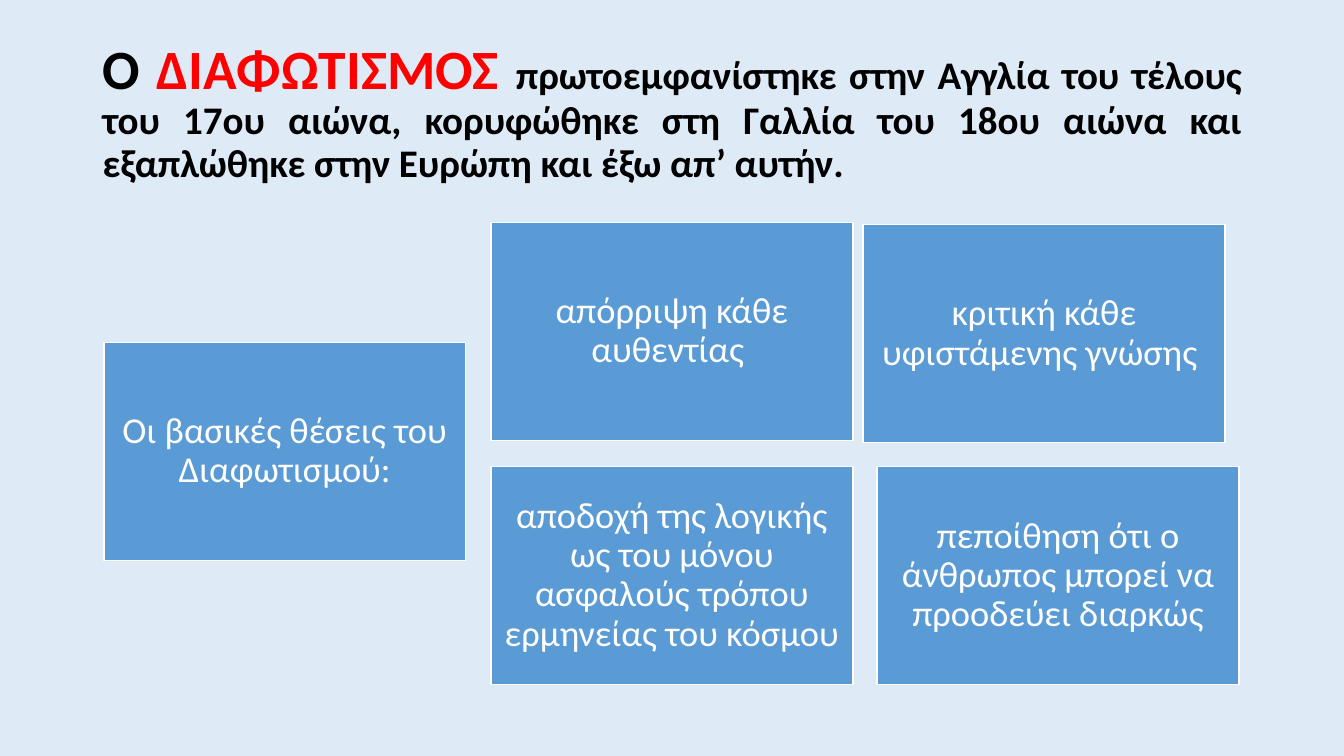
from pptx import Presentation
from pptx.dml.color import RGBColor
from pptx.enum.shapes import MSO_SHAPE as Shape
from pptx.enum.text import MSO_ANCHOR as Anchor, PP_ALIGN as Align
from pptx.util import Inches, Pt

FONT = "Calibri"
BLACK, RED, WHITE = "000000", "FF0000", "FFFFFF"
PALE_BLUE, BLUE = "DEEBF7", "5B9BD5"
CARD_WIDTH, CARD_HEIGHT = 3.59, 2.16
CARD_INSET = 0.11

HEADING = [
    ("Ο", 39.6, BLACK),
    (" ΔΙΑΦΩΤΙΣΜΟΣ ", 39.6, RED),
    ("πρωτοεμφανίστηκε στην Αγγλία του τέλους του 17ου αιώνα, κορυφώθηκε "
     "στη Γαλλία του 18ου αιώνα και εξαπλώθηκε στην Ευρώπη και έξω απ’ αυτήν.",
     27.9, BLACK),
]
# Left and top are measured from the corner of the diagram.
THESES = [
    (0, 1.19, "Οι βασικές θέσεις του Διαφωτισμού:"),
    (7.53, 0.02, "κριτική κάθε υφιστάμενης γνώσης "),
    (3.84, 0, "απόρριψη κάθε αυθεντίας "),
    (3.84, 2.42, "αποδοχή της λογικής ως του μόνου ασφαλούς τρόπου "
                 "ερμηνείας του κόσμου "),
    (7.67, 2.42, "πεποίθηση ότι ο άνθρωπος μπορεί να προοδεύει διαρκώς"),
]


def color(hex_code):
    return RGBColor.from_string(hex_code)


def add_run(paragraph, text, size, hex_code, bold=False):
    run = paragraph.add_run()
    run.text = text
    run.font.name = FONT
    run.font.size = Pt(size)
    run.font.bold = bold
    run.font.color.rgb = color(hex_code)


def prepare_paragraph(frame, align):
    """Wrap and centre the frame vertically; return its first paragraph."""
    frame.word_wrap = True
    frame.vertical_anchor = Anchor.MIDDLE
    paragraph = frame.paragraphs[0]
    paragraph.alignment = align
    paragraph.line_spacing = 0.9
    return paragraph


def add_heading(slide, left, top, width, height):
    heading = slide.shapes.add_textbox(
        Inches(left), Inches(top), Inches(width), Inches(height))
    paragraph = prepare_paragraph(heading.text_frame, Align.JUSTIFY)
    for text, size, hex_code in HEADING:
        add_run(paragraph, text, size, hex_code, bold=True)


def add_card(slide, left, top, text):
    card = slide.shapes.add_shape(
        Shape.RECTANGLE, Inches(left), Inches(top),
        Inches(CARD_WIDTH), Inches(CARD_HEIGHT))
    card.shadow.inherit = False
    card.fill.solid()
    card.fill.fore_color.rgb = color(BLUE)
    card.line.color.rgb = color(WHITE)
    card.line.width = Pt(1)

    frame = card.text_frame
    frame.margin_left = frame.margin_right = Inches(CARD_INSET)
    frame.margin_top = frame.margin_bottom = Inches(CARD_INSET)
    add_run(prepare_paragraph(frame, Align.CENTER), text, 26, WHITE)


def add_theses_diagram(slide, left, top):
    for offset_x, offset_y, text in THESES:
        add_card(slide, left + offset_x, top + offset_y, text)


def main():
    presentation = Presentation()
    presentation.slide_width = Inches(13.33)
    presentation.slide_height = Inches(7.5)
    slide = presentation.slides.add_slide(presentation.slide_layouts[6])
    slide.background.fill.solid()
    slide.background.fill.fore_color.rgb = color(PALE_BLUE)

    add_heading(slide, 0.92, 0.4, 11.5, 1.45)
    add_theses_diagram(slide, 1.03, 2.21)
    presentation.save("out.pptx")


if __name__ == "__main__":
    main()
